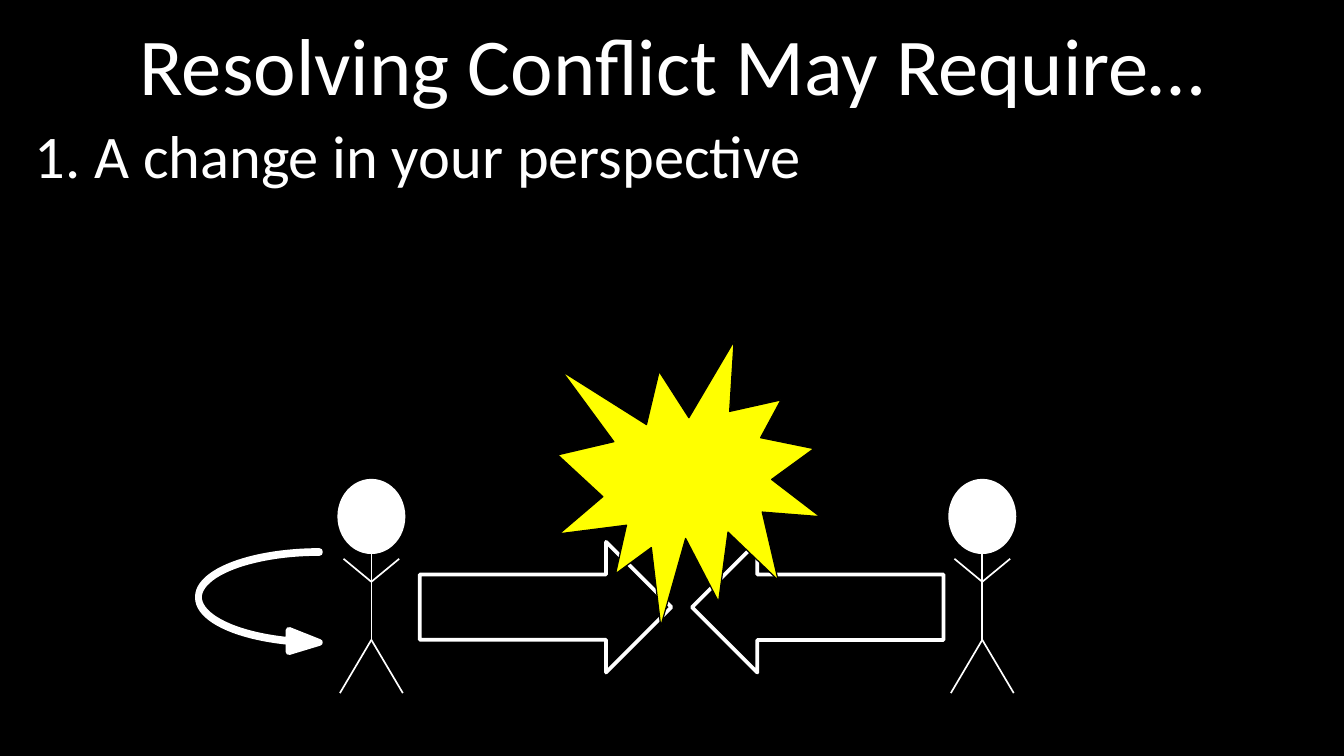
from lxml import etree
from pptx import Presentation
from pptx.dml.color import RGBColor
from pptx.enum.shapes import MSO_CONNECTOR, MSO_SHAPE
from pptx.enum.text import MSO_ANCHOR, PP_ALIGN
from pptx.oxml.ns import qn
from pptx.util import Inches, Pt

BLACK = RGBColor(0x00, 0x00, 0x00)
WHITE = RGBColor(0xFF, 0xFF, 0xFF)
YELLOW = RGBColor(0xFF, 0xFF, 0x00)

STRAIGHT = MSO_CONNECTOR.STRAIGHT
OVAL = MSO_SHAPE.OVAL
RIGHT_ARROW = MSO_SHAPE.RIGHT_ARROW
CURVED_ARROW = MSO_SHAPE.CURVED_LEFT_ARROW
BURST = MSO_SHAPE.EXPLOSION1
CENTER = PP_ALIGN.CENTER
LEFT = PP_ALIGN.LEFT
TOP = MSO_ANCHOR.TOP
MIDDLE = MSO_ANCHOR.MIDDLE

FONT = "Calibri"
PERSON_CENTERS = (8.12, 3.07)
LIMBS = (
    (0, 4.56, 0, 5.29),
    (0, 5.29, 0.26, 5.73),
    (0, 5.29, -0.26, 5.73),
    (-0.23, 4.62, 0, 4.81),
    (0.23, 4.62, 0, 4.81),
)
CLASH_ARROWS = ((3.47, 0), (5.72, 180))


def add_text(slide, box, text, size, align, anchor):
    sp = slide.shapes.add_textbox(*map(Inches, box))
    tf = sp.text_frame
    tf.word_wrap = True
    tf.vertical_anchor = anchor
    p = tf.paragraphs[0]
    p.text = text
    p.alignment = align
    p.font.name = FONT
    p.font.size = Pt(size)
    p.font.color.rgb = WHITE
    return p


def add_figure(shapes, kind, box, fill, line, width):
    sp = shapes.add_shape(kind, *map(Inches, box))
    sp.shadow.inherit = False
    if fill is None:
        sp.fill.background()
    else:
        sp.fill.solid()
        sp.fill.fore_color.rgb = fill
    sp.line.color.rgb = line
    sp.line.width = Pt(width)
    return sp


def add_limb(shapes, x1, y1, x2, y2):
    limb = shapes.add_connector(STRAIGHT, *map(Inches, (x1, y1, x2, y2)))
    limb.line.color.rgb = WHITE
    limb.line.width = Pt(1)
    etree.SubElement(limb._element.spPr, qn("a:effectLst"))


def add_person(slide, center):
    person = slide.shapes.add_group_shape().shapes
    add_figure(person, OVAL, (center - 0.26, 3.98, 0.52, 0.58), WHITE, WHITE, 3)
    for x1, y1, x2, y2 in LIMBS:
        add_limb(person, center + x1, y1, center + x2, y2)


def add_clash_arrows(slide):
    arrows = slide.shapes.add_group_shape().shapes
    for left, rotation in CLASH_ARROWS:
        sp = add_figure(arrows, RIGHT_ARROW, (left, 4.48, 2.08, 1.08), None, WHITE, 2.25)
        sp.rotation = rotation


def add_turning_arrow(slide):
    sp = add_figure(slide.shapes, CURVED_ARROW, (1.64, 4.56, 1, 0.84), WHITE, WHITE, 4)
    sp.rotation = 180
    sp._element.spPr.find(qn("a:xfrm")).set("flipV", "1")
    for i, value in enumerate((0.01, 0.21, 0.3)):
        sp.adjustments[i] = value


def main():
    prs = Presentation()
    prs.slide_width = Inches(11.11)
    prs.slide_height = Inches(6.25)
    slide = prs.slides.add_slide(prs.slide_layouts[6])
    slide.background.fill.solid()
    slide.background.fill.fore_color.rgb = BLACK

    add_text(slide, (0.19, 0.14, 10.74, 0.76),
             "Resolving Conflict May Require…", 48, CENTER, MIDDLE)
    p = add_text(slide, (0.19, 0.97, 10.74, 5.07),
                 "1. A change in your perspective", 36, LEFT, TOP)
    p.line_spacing = 0.95
    p.space_before = Pt(7.2)

    for center in PERSON_CENTERS:
        add_person(slide, center)
    add_clash_arrows(slide)
    add_turning_arrow(slide)
    add_figure(slide.shapes, BURST, (4.61, 2.82, 2.17, 2.36), YELLOW, BLACK, 0.75)

    prs.save("out.pptx")


if __name__ == "__main__":
    main()
